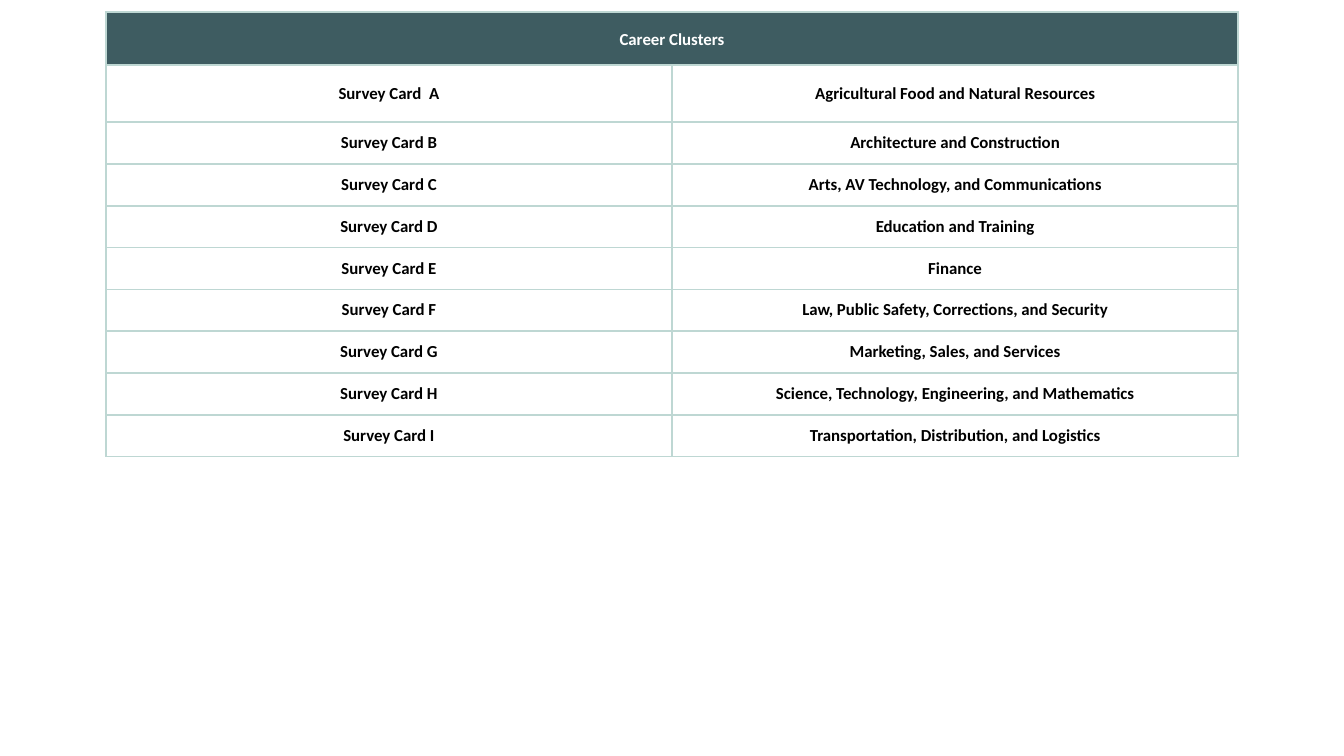
from lxml.etree import SubElement
from pptx import Presentation
from pptx.dml.color import RGBColor
from pptx.enum.text import MSO_ANCHOR, PP_ALIGN
from pptx.oxml.ns import qn
from pptx.util import Cm, Pt

WHITE = RGBColor(0xFF, 0xFF, 0xFF)
BLACK = RGBColor(0, 0, 0)
SLATE = RGBColor(0x3E, 0x5C, 0x61)
MINT = RGBColor(0xBE, 0xD7, 0xD3)

HEADING = "Career Clusters"
CLUSTERS = [
    ("Survey Card  A", "Agricultural Food and Natural Resources"),
    ("Survey Card B", "Architecture and Construction"),
    ("Survey Card C", "Arts, AV Technology, and Communications"),
    ("Survey Card D", "Education and Training"),
    ("Survey Card E", "Finance"),
    ("Survey Card F", "Law, Public Safety, Corrections, and Security"),
    ("Survey Card G", "Marketing, Sales, and Services"),
    ("Survey Card H", "Science, Technology, Engineering, and Mathematics"),
    ("Survey Card I", "Transportation, Distribution, and Logistics"),
]
COLUMN_WIDTH = 10.7
HEADER_HEIGHT, FIRST_HEIGHT, ROW_HEIGHT = 1.0, 1.08, 0.79


class SlideBuilder:
    font_name = "Calibri"
    font_size = Pt(9)
    inset = Cm(0.2)

    def __init__(self, page):
        self.page = page

    def table(self, left, top, widths, heights):
        frame = self.page.shapes.add_table(
            len(heights), len(widths), Cm(left), Cm(top),
            Cm(sum(widths)), Cm(sum(heights)))
        table = frame.table
        table.first_row = table.horz_banding = False
        for column, width in zip(table.columns, widths):
            column.width = Cm(width)
        for row, height in zip(table.rows, heights):
            row.height = Cm(height)
        return table

    def borders(self, cell):
        properties = cell._tc.get_or_add_tcPr()
        for side in ("lnL", "lnR", "lnT", "lnB"):
            line = SubElement(properties, qn(f"a:{side}"), w=str(Pt(1)))
            fill = SubElement(line, qn("a:solidFill"))
            SubElement(fill, qn("a:srgbClr"), val=str(MINT))

    def cell(self, cell, text, fill=WHITE, color=BLACK):
        self.borders(cell)
        cell.fill.solid()
        cell.fill.fore_color.rgb = fill
        cell.vertical_anchor = MSO_ANCHOR.MIDDLE
        cell.margin_left = cell.margin_right = self.inset
        cell.margin_top = cell.margin_bottom = self.inset
        cell.text = text
        para = cell.text_frame.paragraphs[0]
        para.alignment = PP_ALIGN.CENTER
        para.font.name = self.font_name
        para.font.size = self.font_size
        para.font.bold = True
        para.font.color.rgb = color
        return para


def main():
    deck = Presentation()
    deck.slide_width, deck.slide_height = Cm(25.4), Cm(14.29)
    builder = SlideBuilder(deck.slides.add_slide(deck.slide_layouts[6]))

    heights = [HEADER_HEIGHT, FIRST_HEIGHT] + [ROW_HEIGHT] * (len(CLUSTERS) - 1)
    table = builder.table(2, 0.23, [COLUMN_WIDTH] * 2, heights)

    header, covered = table.cell(0, 0), table.cell(0, 1)
    header.merge(covered)
    builder.borders(covered)
    heading = builder.cell(header, HEADING, SLATE, WHITE)
    heading.line_spacing = 1.15
    heading.space_after = Pt(6)

    for row, labels in enumerate(CLUSTERS, start=1):
        for column, label in enumerate(labels):
            builder.cell(table.cell(row, column), label)

    deck.save("out.pptx")


if __name__ == "__main__":
    main()
